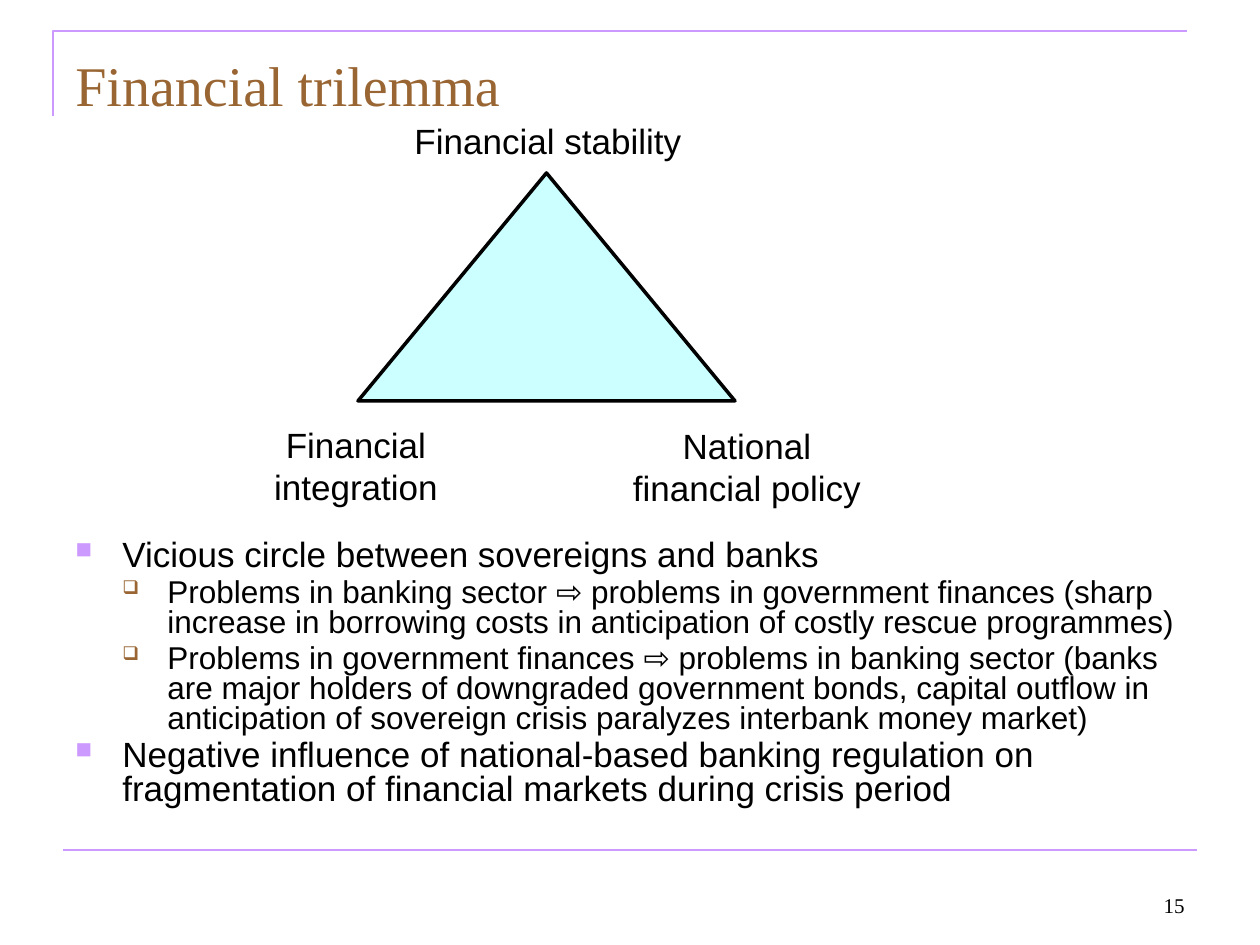
from dataclasses import dataclass

from lxml import etree
from pptx import Presentation
from pptx.dml.color import RGBColor
from pptx.enum.shapes import MSO_CONNECTOR, MSO_SHAPE
from pptx.enum.text import MSO_ANCHOR, PP_ALIGN
from pptx.oxml.ns import qn
from pptx.util import Pt

EMU_PER_PX = 914400 / 126
STRAIGHT = MSO_CONNECTOR.STRAIGHT
RECTANGLE, TRIANGLE = MSO_SHAPE.RECTANGLE, MSO_SHAPE.ISOSCELES_TRIANGLE
TOP, MIDDLE, BOTTOM = MSO_ANCHOR.TOP, MSO_ANCHOR.MIDDLE, MSO_ANCHOR.BOTTOM
LEFT, CENTER, RIGHT = PP_ALIGN.LEFT, PP_ALIGN.CENTER, PP_ALIGN.RIGHT
SANS, SERIF = "Arial", "Times New Roman"
COLORS = {
    "rule": "CC99FF",
    "title": "996633",
    "text": "000000",
    "triangle": "CCFFFF",
    "label": "FFFFFF",
}


@dataclass(frozen=True)
class Box:
    left: int
    top: int
    width: int
    height: int


@dataclass(frozen=True)
class CornerLabel:
    text: str
    box: Box


@dataclass(frozen=True)
class BulletStyle:
    level: int
    size: int
    indent: int
    hanging: int
    mark: str
    mark_color: str
    mark_percent: int


@dataclass(frozen=True)
class Point:
    text: str
    style: BulletStyle


MAIN = BulletStyle(0, 20, 47, 47, "■", "rule", 65)
SUB = BulletStyle(1, 18, 92, 45, "❑", "title", 60)

CORNERS = [
    CornerLabel("National financial policy", Box(606, 418, 282, 97)),
    CornerLabel("Financial integration", Box(221, 417, 270, 97)),
    CornerLabel("Financial stability", Box(389, 113, 318, 55)),
]
POINTS = [
    Point("Vicious circle between sovereigns and banks", MAIN),
    Point("Problems in banking sector ⇨ problems in government finances (sharp "
          "increase in borrowing costs in anticipation of costly rescue programmes)", SUB),
    Point("Problems in government finances ⇨ problems in banking sector (banks "
          "are major holders of downgraded government bonds, capital outflow in "
          "anticipation of sovereign crisis paralyzes interbank money market)", SUB),
    Point("Negative influence of national-based banking regulation on "
          "fragmentation of financial markets during crisis period", MAIN),
]


def px(length: int) -> int:
    return round(length * EMU_PER_PX)


def place(box: Box) -> tuple:
    return px(box.left), px(box.top), px(box.width), px(box.height)


def color(name: str) -> RGBColor:
    return RGBColor.from_string(COLORS[name])


def style_font(paragraph, size: int, face: str = SANS, color_name: str = "text") -> None:
    paragraph.font.size = Pt(size)
    paragraph.font.name = face
    paragraph.font.color.rgb = color(color_name)


def style_line(line, color_name: str, width: float) -> None:
    line.color.rgb = color(color_name)
    line.width = Pt(width)


def add_text(slide, box: Box, text: str, size: int, face: str,
             color_name: str, align: PP_ALIGN, anchor: MSO_ANCHOR):
    frame = slide.shapes.add_textbox(*place(box)).text_frame
    frame.word_wrap = True
    frame.vertical_anchor = anchor
    paragraph = frame.paragraphs[0]
    paragraph.text = text
    paragraph.alignment = align
    style_font(paragraph, size, face, color_name)
    return frame


def add_corner_rule(slide) -> None:
    """Draw the open frame around the title's top left corner."""
    builder = slide.shapes.build_freeform(px(53), px(116))
    builder.add_line_segments([(px(53), px(31)), (px(1187), px(31))], close=False)
    rule = builder.convert_to_shape()
    rule.shadow.inherit = False
    rule.fill.background()
    style_line(rule.line, "rule", 1.5)


def add_footer_rule(slide) -> None:
    rule = slide.shapes.add_connector(STRAIGHT, px(63), px(850), px(1197), px(850))
    etree.SubElement(rule.line._get_or_add_ln().getparent(), qn("a:effectLst"))
    style_line(rule.line, "rule", 1.5)


def add_filled_shape(slide, kind: MSO_SHAPE, box: Box, fill: str):
    shape = slide.shapes.add_shape(kind, *place(box))
    shape.shadow.inherit = False
    shape.fill.solid()
    shape.fill.fore_color.rgb = color(fill)
    shape.line.fill.background()
    return shape


def add_corner_label(slide, label: CornerLabel) -> None:
    frame = add_filled_shape(slide, RECTANGLE, label.box, "label").text_frame
    frame.word_wrap = True
    frame.vertical_anchor = MIDDLE
    paragraph = frame.paragraphs[0]
    paragraph.text = label.text
    paragraph.alignment = CENTER
    style_font(paragraph, 20)


def set_bullet(paragraph, style: BulletStyle) -> None:
    properties = paragraph._p.get_or_add_pPr()
    properties.set("marL", str(px(style.indent)))
    properties.set("indent", str(-px(style.hanging)))
    # The bullet elements must come after spacing and before the font defaults.
    position = len(properties.findall(qn("a:lnSpc")) + properties.findall(qn("a:spcBef")))
    mark_color = etree.Element(qn("a:buClr"))
    etree.SubElement(mark_color, qn("a:srgbClr"), val=COLORS[style.mark_color])
    mark_size = etree.Element(qn("a:buSzPct"), val=str(style.mark_percent * 1000))
    mark = etree.Element(qn("a:buChar"), char=style.mark)
    properties[position:position] = [mark_color, mark_size, mark]


def add_points(slide, box: Box, points: list[Point]) -> None:
    frame = slide.shapes.add_textbox(*place(box)).text_frame
    frame.word_wrap = True
    for index, point in enumerate(points):
        paragraph = frame.add_paragraph() if index else frame.paragraphs[0]
        paragraph.text = point.text
        paragraph.level = point.style.level
        paragraph.line_spacing = 0.8
        paragraph.space_before = Pt(3)
        style_font(paragraph, point.style.size)
        set_bullet(paragraph, point.style)


def main() -> None:
    presentation = Presentation()
    presentation.slide_width, presentation.slide_height = px(1260), px(945)
    slide = presentation.slides.add_slide(presentation.slide_layouts[6])

    add_corner_rule(slide)
    add_footer_rule(slide)
    add_text(slide, Box(903, 861, 294, 63), "15", 12, SERIF, "text", RIGHT, BOTTOM)
    title = add_text(slide, Box(63, 38, 1134, 102), "Financial trilemma",
                     32, SERIF, "title", LEFT, TOP)
    title.margin_top = px(13)
    add_points(slide, Box(63, 534, 1134, 312), POINTS)

    for label in CORNERS:
        add_corner_label(slide, label)
    triangle = add_filled_shape(slide, TRIANGLE, Box(358, 173, 377, 228), "triangle")
    style_line(triangle.line, "text", 2)

    presentation.save("out.pptx")


if __name__ == "__main__":
    main()
